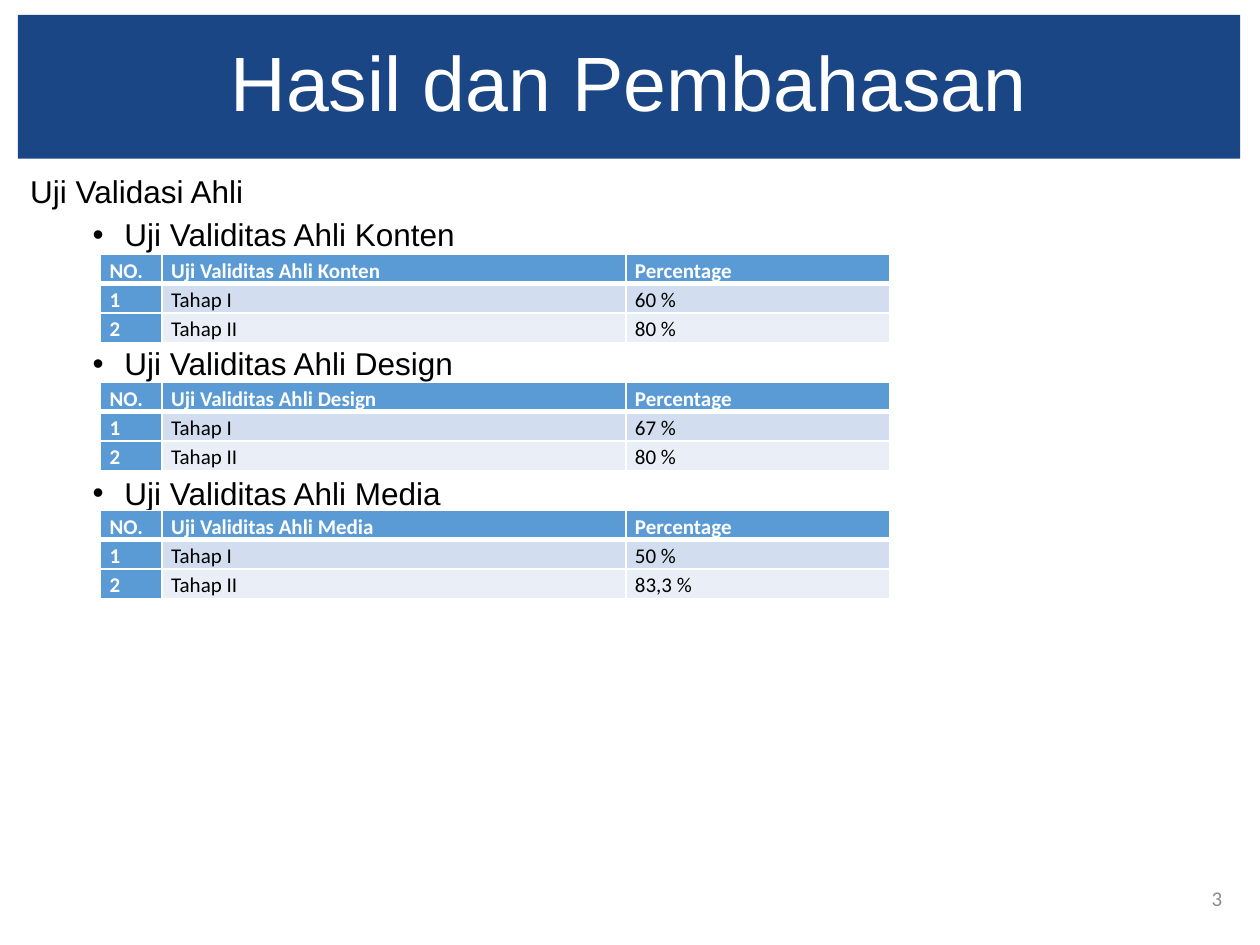
from lxml import etree
from pptx import Presentation
from pptx.dml.color import RGBColor
from pptx.enum.text import MSO_ANCHOR, PP_ALIGN
from pptx.oxml.ns import qn
from pptx.util import Cm, Pt

MIDDLE = MSO_ANCHOR.MIDDLE
LEFT, CENTER, RIGHT = PP_ALIGN.LEFT, PP_ALIGN.CENTER, PP_ALIGN.RIGHT
JUSTIFY = PP_ALIGN.JUSTIFY

COLORS = {
    "navy": "1B4685", "blue": "5B9BD5", "band": "D2DEEF", "pale": "EAEFF7",
    "white": "FFFFFF", "black": "000000", "gray": "8C8C8C",
}
TITLE = "Hasil dan Pembahasan"
TOPIC = "Uji Validasi Ahli"
TESTS = [
    ("Uji Validitas Ahli Konten", ["60 %", "80 %"]),
    ("Uji Validitas Ahli Design", ["67 %", "80 %"]),
    ("Uji Validitas Ahli Media", ["50 %", "83,3 %"]),
]
STAGES = ["Tahap I", "Tahap II"]
NUMBER = "3"

EDGE, WIDE = 0.36, 24.64
COLS = [1.24, 9.35, 5.31]
TABLE_X, TABLE_Y, ROW = 2.03, 5.13, 0.59
PITCH = 2.58
LINE = 18.6  # height in points of one 18 pt line at 0.9 spacing


def color(name):
    return RGBColor.from_string(COLORS[name])


def paint(fill, name):
    fill.solid()
    fill.fore_color.rgb = color(name)


def write(para, text, size, face, tint, align=LEFT, space=0.9, bold=False):
    para.alignment = align
    para.line_spacing = space
    para.space_before = Pt(0)
    run = para.add_run()
    run.text = text
    font = run.font
    font.size, font.name, font.bold = Pt(size), face, bold
    font.color.rgb = color(tint)


def bullet(para):
    props = para._p.get_or_add_pPr()
    props.set("marL", str(Cm(1.9)))
    props.set("indent", str(Cm(-0.64)))
    etree.SubElement(props, qn("a:buFont")).set("typeface", "Arial")
    etree.SubElement(props, qn("a:buChar")).set("char", "•")


def border(cell, row):
    """Draw white cell edges, thick below the header row."""
    props = cell._tc.get_or_add_tcPr()
    thick = {"T": row == 1, "B": row == 0}
    for side in "LRTB":
        width = Pt(3 if thick.get(side) else 1)
        line = etree.SubElement(props, qn("a:ln" + side), w=str(width))
        solid = etree.SubElement(line, qn("a:solidFill"))
        etree.SubElement(solid, qn("a:srgbClr")).set("val", COLORS["white"])


def add_text(slide, x, y, w, h):
    frame = slide.shapes.add_textbox(Cm(x), Cm(y), Cm(w), Cm(h)).text_frame
    frame.word_wrap = True
    return frame


def add_test(slide, top, name, scores):
    rows = [("NO.", name, "Percentage")]
    rows += [(str(n), *pair) for n, pair in enumerate(zip(STAGES, scores), 1)]
    table = slide.shapes.add_table(
        len(rows), len(COLS), Cm(TABLE_X), Cm(top),
        Cm(sum(COLS)), Cm(ROW * len(rows))).table
    for col, width in zip(table.columns, COLS):
        col.width = Cm(width)
    for r, row in enumerate(rows):
        table.rows[r].height = Cm(ROW)
        for c, text in enumerate(row):
            cell = table.cell(r, c)
            head = r == 0 or c == 0
            cell.margin_left = cell.margin_right = Cm(0.18)
            cell.margin_top = cell.margin_bottom = 0
            border(cell, r)
            paint(cell.fill, "blue" if head else ("band", "pale")[r - 1])
            write(cell.text_frame.paragraphs[0], text, 12, "Calibri",
                  "white" if head else "black", JUSTIFY, 1.15, head)


def main():
    deck = Presentation()
    deck.slide_width, deck.slide_height = Cm(25.4), Cm(19.05)
    slide = deck.slides.add_slide(deck.slide_layouts[5])

    title = slide.shapes.title
    title.left, title.top = Cm(EDGE), Cm(0.3)
    title.width, title.height = Cm(WIDE), Cm(2.9)
    paint(title.fill, "navy")
    title.text_frame.vertical_anchor = MIDDLE
    write(title.text_frame.paragraphs[0], TITLE, 44, "Arial", "white", CENTER)

    body = add_text(slide, EDGE, 3.43, WIDE, 14.15)
    write(body.paragraphs[0], TOPIC, 18, "Arial", "black")
    for i, (name, scores) in enumerate(TESTS):
        para = body.add_paragraph()
        bullet(para)
        write(para, name, 18, "Arial", "black")
        para.space_before = Pt(round(Cm(PITCH).pt - LINE, 1) if i else 5)
        add_test(slide, TABLE_Y + i * PITCH, name, scores)

    page = add_text(slide, 23.8, 17.6, 1.09, 1.02)
    page.vertical_anchor = MIDDLE
    write(page.paragraphs[0], NUMBER, 12, "Calibri", "gray", RIGHT, 1.0)

    deck.save("out.pptx")


if __name__ == "__main__":
    main()
